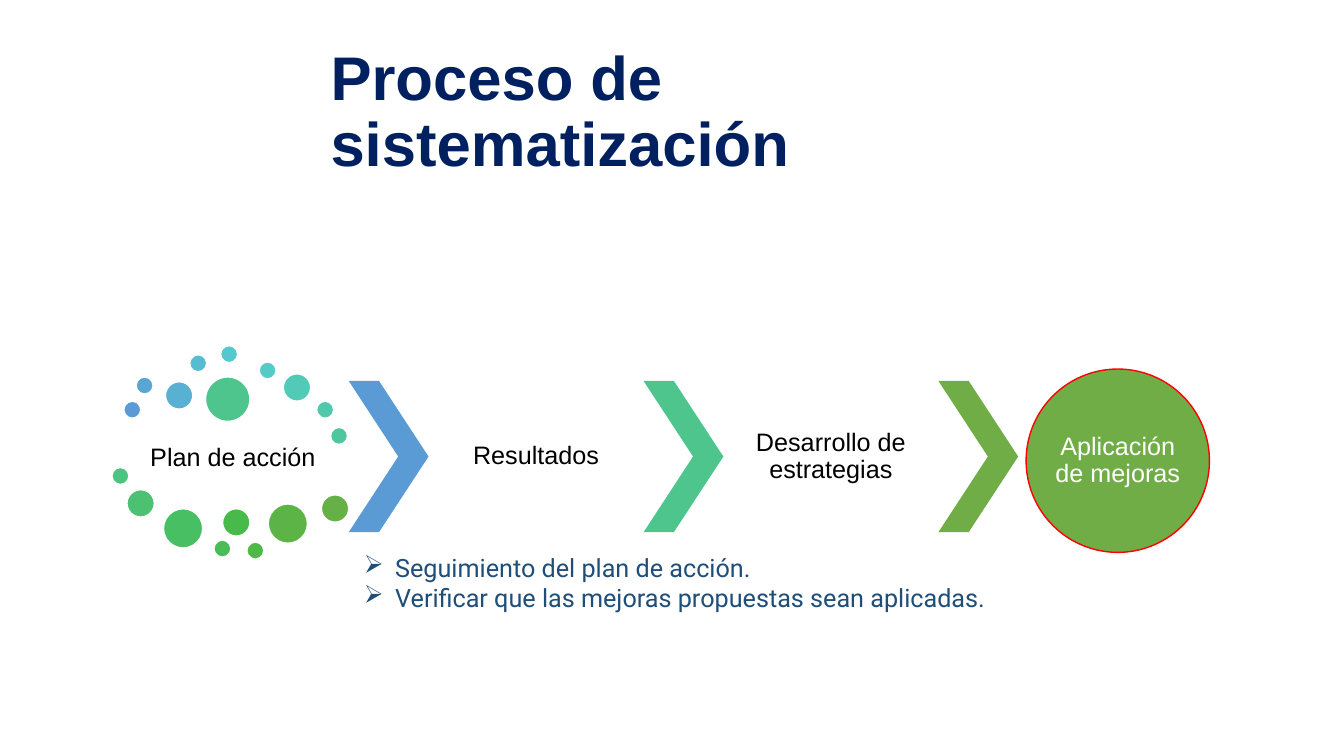
from lxml.etree import SubElement
from pptx import Presentation
from pptx.dml.color import RGBColor
from pptx.enum.shapes import MSO_SHAPE
from pptx.enum.text import MSO_ANCHOR, PP_ALIGN
from pptx.oxml.ns import qn
from pptx.util import Cm, Pt

NAVY = RGBColor(0x00, 0x20, 0x60)
STEEL = RGBColor(0x1F, 0x4E, 0x79)
BLUE = RGBColor(0x5B, 0x9B, 0xD5)
TEAL = RGBColor(0x4D, 0xC5, 0x8D)
GREEN = RGBColor(0x70, 0xAD, 0x47)
RED = RGBColor(0xFF, 0x00, 0x00)
BLACK = RGBColor(0x00, 0x00, 0x00)
WHITE = RGBColor(0xFF, 0xFF, 0xFF)

# Dot diameters in cm
SMALL, MEDIUM, LARGE, HUGE = 0.43, 0.69, 0.99, 1.12

# Dots of the cloud: left, top, diameter in cm within the cloud, colour
DOTS = [
    (0.30, 1.40, SMALL, BLUE),
    (0.61, 0.79, SMALL, RGBColor(0x59, 0xA6, 0xD3)),
    (1.35, 0.91, MEDIUM, RGBColor(0x58, 0xB1, 0xD2)),
    (1.96, 0.23, SMALL, RGBColor(0x56, 0xBC, 0xD0)),
    (2.74, 0.00, SMALL, RGBColor(0x55, 0xC7, 0xCE)),
    (3.71, 0.41, SMALL, RGBColor(0x53, 0xCC, 0xC7)),
    (4.32, 0.71, MEDIUM, RGBColor(0x52, 0xCA, 0xB8)),
    (5.16, 1.40, SMALL, RGBColor(0x50, 0xC8, 0xAA)),
    (5.51, 2.06, SMALL, RGBColor(0x4F, 0xC7, 0x9C)),
    (2.36, 0.79, HUGE, TEAL),
    (0.00, 3.07, SMALL, RGBColor(0x4C, 0xC3, 0x7F)),
    (0.38, 3.63, MEDIUM, RGBColor(0x4B, 0xC1, 0x71)),
    (1.30, 4.11, LARGE, RGBColor(0x49, 0xBF, 0x64)),
    (2.57, 4.90, SMALL, RGBColor(0x48, 0xBC, 0x56)),
    (2.79, 4.11, MEDIUM, RGBColor(0x47, 0xBA, 0x49)),
    (3.40, 4.95, SMALL, RGBColor(0x50, 0xB8, 0x46)),
    (3.94, 3.99, LARGE, RGBColor(0x5C, 0xB4, 0x47)),
    (5.28, 3.76, MEDIUM, RGBColor(0x66, 0xB1, 0x47)),
]


def add_text(p, text, size, color, font="Arial", bold=False):
    r = p.add_run()
    r.text = text
    r.font.name = font
    r.font.size = Pt(size)
    r.font.bold = bold
    r.font.color.rgb = color


def add_box(s, x, y, w, h):
    tf = s.shapes.add_textbox(Cm(x), Cm(y), Cm(w), Cm(h)).text_frame
    tf.word_wrap = True
    return tf


def set_insets(tf, inset):
    tf.margin_left = tf.margin_right = Cm(inset)
    tf.margin_top = tf.margin_bottom = Cm(inset)


def fill_label(tf, text, color, inset):
    tf.word_wrap = True
    tf.vertical_anchor = MSO_ANCHOR.MIDDLE
    set_insets(tf, inset)
    p = tf.paragraphs[0]
    p.alignment = PP_ALIGN.CENTER
    p.line_spacing = 0.9
    add_text(p, text, 18, color)


def add_figure(s, kind, x, y, w, h, fill, line=None):
    sp = s.shapes.add_shape(kind, Cm(x), Cm(y), Cm(w), Cm(h))
    sp.shadow.inherit = False
    sp.fill.solid()
    sp.fill.fore_color.rgb = fill
    if line is None:
        sp.line.fill.background()
    else:
        sp.line.color.rgb = line
        sp.line.width = Pt(1)
    return sp


def add_title(s, x, y, w, h):
    tf = add_box(s, x, y, w, h)
    tf.vertical_anchor = MSO_ANCHOR.MIDDLE
    p = tf.paragraphs[0]
    p.line_spacing = 0.9
    add_text(p, "Proceso de sistematización", 44, NAVY, bold=True)


def add_cloud(s, x, y):
    fill_label(add_box(s, x + 0.33, y + 1.93, 5.44, 1.8), "Plan de acción", BLACK, 0.08)
    for dx, dy, d, color in DOTS:
        add_figure(s, MSO_SHAPE.OVAL, x + dx, y + dy, d, d, color, WHITE)


def add_stages(s, x, y, h):
    """Chevrons at equal steps, each followed by the label of its stage."""
    step, chevron_w = 7.43, 2.01
    stages = [(BLUE, "Resultados"), (TEAL, "Desarrollo de estrategias"), (GREEN, None)]
    for i, (color, label) in enumerate(stages):
        left = x + i * step
        sp = add_figure(s, MSO_SHAPE.CHEVRON, left, y, chevron_w, h, color)
        sp.adjustments[0] = 0.62
        if label:
            tf = add_box(s, left + chevron_w, y, step - chevron_w, h)
            fill_label(tf, label, BLACK, 0.08)


def add_goal(s, x, y, d):
    sp = add_figure(s, MSO_SHAPE.OVAL, x, y, d, d, GREEN, RED)
    fill_label(sp.text_frame, "Aplicación de mejoras", WHITE, 0)


def add_bullets(s, x, y, w, h):
    tf = add_box(s, x, y, w, h)
    lines = ["Seguimiento del plan de acción.",
             "Verificar que las mejoras propuestas sean aplicadas."]
    for i, line in enumerate(lines):
        p = tf.add_paragraph() if i else tf.paragraphs[0]
        pPr = p._p.get_or_add_pPr()
        pPr.set("marL", str(Cm(0.79)))
        pPr.set("indent", str(-Cm(0.79)))
        SubElement(pPr, qn("a:buChar")).set("char", "➢")
        add_text(p, line, 18, STEEL, "Roboto")


def main():
    prs = Presentation()
    prs.slide_width, prs.slide_height = Cm(33.87), Cm(19.05)
    s = prs.slides.add_slide(prs.slide_layouts[6])

    # Heading
    add_title(s, 8.08, 1.02, 17.5, 3.68)

    # Process, from plan to improvements
    add_cloud(s, 2.82, 8.71)
    add_stages(s, 8.79, 9.6, 3.81)
    add_goal(s, 25.86, 9.3, 4.62)

    # Follow-up tasks
    add_bullets(s, 8.92, 13.79, 16.66, 2.29)

    prs.save("out.pptx")


if __name__ == "__main__":
    main()
